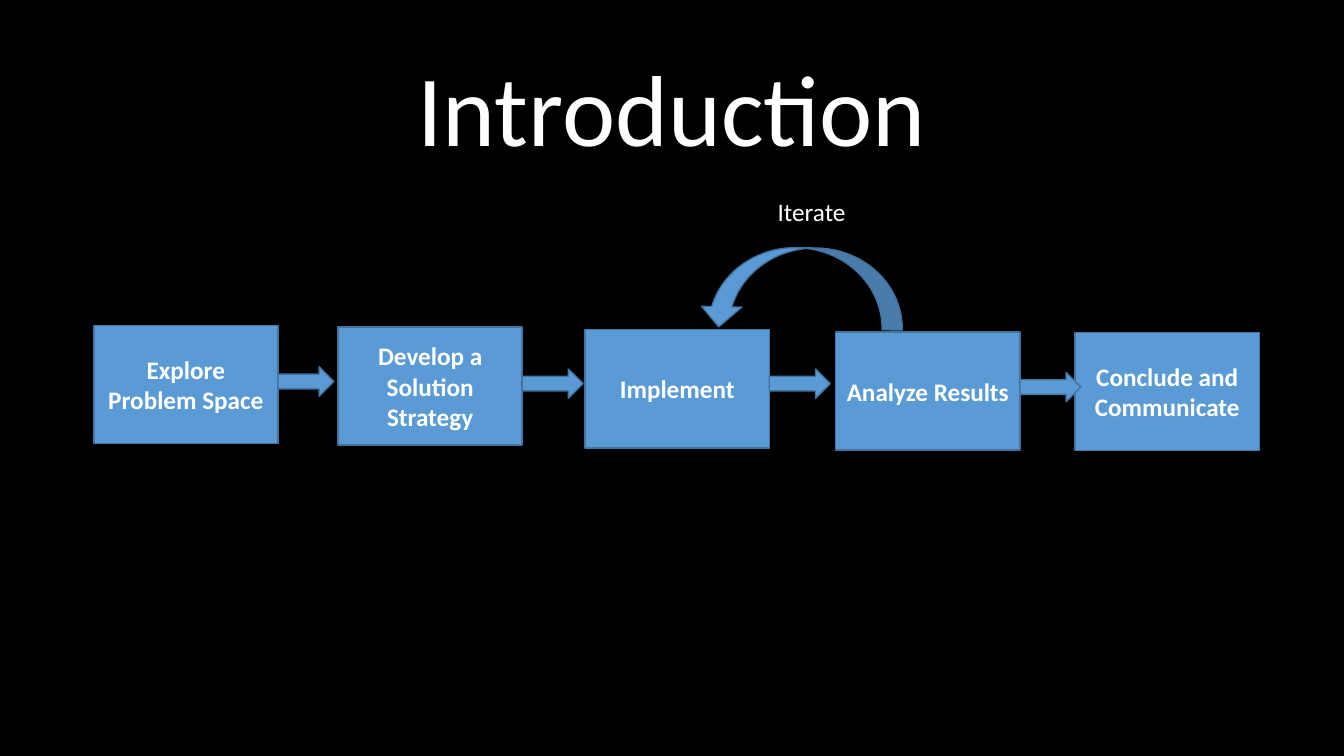
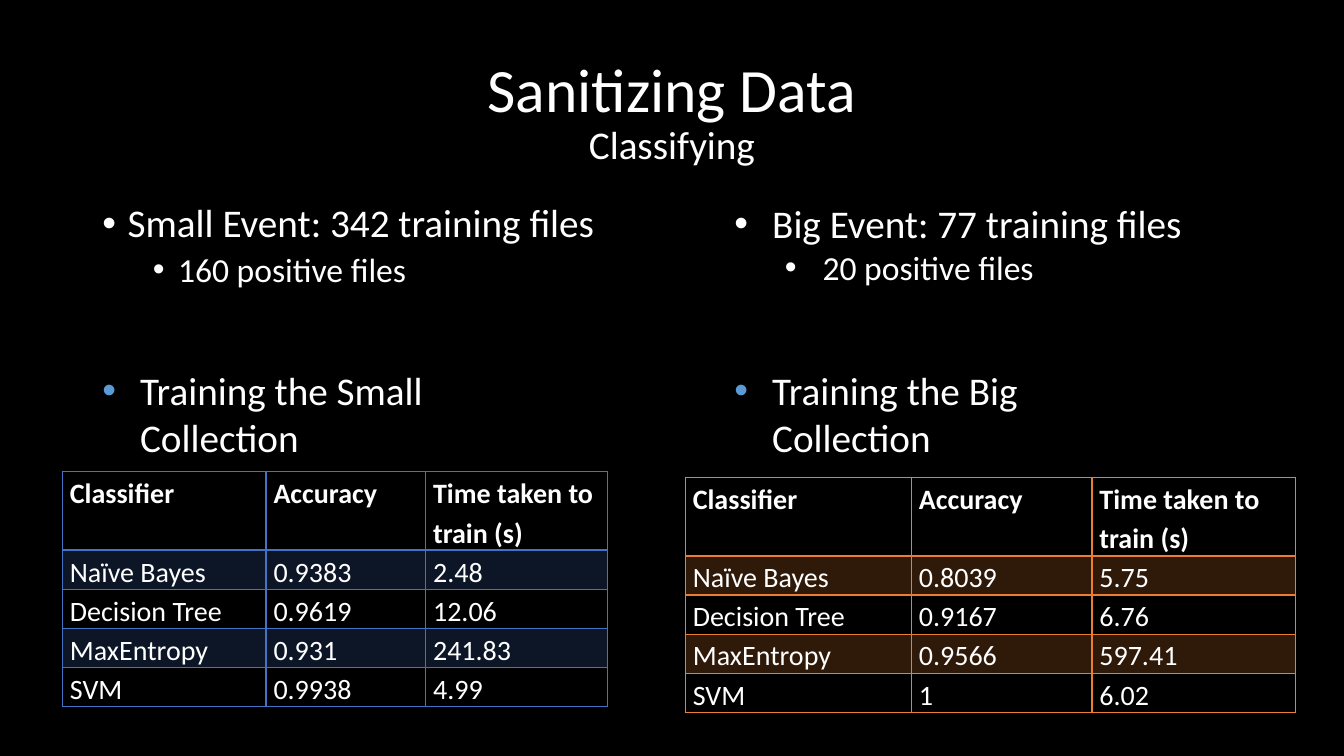
import pptx
import pptx.util
import pptx.dml.color
import pptx.enum.shapes
import pptx.enum.text
import pptx.oxml
import pptx.oxml.ns
import lxml.etree

Pt = pptx.util.Pt
RGBColor = pptx.dml.color.RGBColor
SHAPES = pptx.enum.shapes.MSO_SHAPE
ALIGN = pptx.enum.text.PP_ALIGN
ANCHOR = pptx.enum.text.MSO_ANCHOR
AUTO_SIZE = pptx.enum.text.MSO_AUTO_SIZE
qn = pptx.oxml.ns.qn

# Shared look
FONT = "Calibri"
BLACK = RGBColor(0x00, 0x00, 0x00)
WHITE = RGBColor(0xFF, 0xFF, 0xFF)
STEP_BLUE = RGBColor(0x5B, 0x9B, 0xD5)
STEP_EDGE = RGBColor(0x43, 0x73, 0x9E)
TABLE_BLUE = RGBColor(0x44, 0x72, 0xC4)
TABLE_ORANGE = RGBColor(0xED, 0x7D, 0x31)
TITLE_BOX = (66, 29, 828, 104)
TITLE_ONLY, TITLE_AND_BODY = 5, 1

# Slide 1 content: label, left, top of each step
STEPS = [
    ("Explore Problem Space", 67, 232.5),
    ("Develop a Solution Strategy", 241.5, 233.5),
    ("Implement", 418, 235.5),
    ("Analyze Results", 597, 237),
    ("Conclude and Communicate", 768, 237.5),
]
STEP_WIDTH, STEP_HEIGHT = 131.5, 84.5
ARROWS = [(262, 40), (263.5, 43.5), (263.5, 43.5), (266, 43.5)]  # top, width
ARROW_HEIGHT = 21
LOOP_BOX, LOOP_ROTATION = (543.5, 133, 57.5, 145.5), 91
LOOP_LABEL_BOX = (459.5, 137, 240.5, 29)

# Slide 2 content
# Bullets: lines, level, size, left margin, hanging indent, space before
SMALL_EVENT = [
    (["Small Event: 342 training files"], 0, 28, 18, 18, 0),
    (["160 positive files"], 1, 24, 54, 18, 5),
]
BIG_EVENT = [
    (["Big Event: 77 training files"], 0, 28, 27, 27, 0),
    (["20 positive files"], 1, 24, 63, 27, 0),
]
TRAINING = [
    (["Training the Small", "Collection"], (66, 258, 304.5, 100)),
    (["Training the Big", "Collection"], (517.5, 258, 376, 100)),
]
HEADER = ["Classifier", "Accuracy", "Time taken to train (s)"]
CLASSIFIERS = ["Naïve Bayes", "Decision Tree", "MaxEntropy", "SVM"]
# Colour, left, top, column widths, (accuracy, seconds) by classifier
RESULTS = [
    (TABLE_BLUE, 44.5, 337, (145.5, 114, 130),
     [("0.9383", "2.48"), ("0.9619", "12.06"), ("0.931", "241.83"), ("0.9938", "4.99")]),
    (TABLE_ORANGE, 489.5, 341, (161.5, 129, 145.5),
     [("0.8039", "5.75"), ("0.9167", "6.76"), ("0.9566", "597.41"), ("1", "6.02")]),
]
HEADER_HEIGHT, ROW_HEIGHT = 56, 28


def place(shape, box):
    shape.left, shape.top, shape.width, shape.height = map(Pt, box)


def add_run(paragraph, text, size, bold=False):
    run = paragraph.add_run()
    run.text = text
    run.font.name = FONT
    run.font.size = Pt(size)
    run.font.bold = bold
    run.font.color.rgb = WHITE


def add_slide(presentation, layout, title_lines):
    """Add a slide whose title has one (text, size) pair per line."""
    slide = presentation.slides.add_slide(presentation.slide_layouts[layout])
    title = slide.shapes.title
    place(title, TITLE_BOX)
    frame = title.text_frame
    frame.auto_size = AUTO_SIZE.NONE
    frame.vertical_anchor = ANCHOR.MIDDLE
    paragraph = frame.paragraphs[0]
    paragraph.alignment = ALIGN.CENTER
    paragraph.line_spacing = 0.9
    for index, (text, size) in enumerate(title_lines):
        if index:
            paragraph.add_line_break()
        add_run(paragraph, text, size)
    return slide


def add_textbox(slide, box):
    frame = slide.shapes.add_textbox(*map(Pt, box)).text_frame
    frame.word_wrap = True
    return frame


def add_block(slide, kind, box):
    shape = slide.shapes.add_shape(kind, *map(Pt, box))
    shape.shadow.inherit = False
    shape.fill.solid()
    shape.fill.fore_color.rgb = STEP_BLUE
    shape.line.color.rgb = STEP_EDGE
    shape.line.width = Pt(1)
    return shape


def write_bullets(frame, bullets, line_spacing=1.0, bullet_color=WHITE):
    for index, (lines, level, size, margin, hanging, before) in enumerate(bullets):
        paragraph = frame.add_paragraph() if index else frame.paragraphs[0]
        paragraph.level = level
        properties = paragraph._p.get_or_add_pPr()
        properties.set("marL", str(Pt(margin)))
        properties.set("indent", str(-Pt(hanging)))
        color = lxml.etree.SubElement(properties, qn("a:buClr"))
        lxml.etree.SubElement(color, qn("a:srgbClr"), val=str(bullet_color))
        lxml.etree.SubElement(properties, qn("a:buFont"), typeface="Arial")
        lxml.etree.SubElement(properties, qn("a:buChar"), char="•")
        paragraph.alignment = ALIGN.LEFT
        paragraph.line_spacing = line_spacing
        paragraph.space_before = Pt(before)
        for line_index, line in enumerate(lines):
            if line_index:
                paragraph.add_line_break()
            add_run(paragraph, line, size)


def style_cell(cell, color, row):
    """Draw borders, with a heavy rule under the header, and tint odd rows."""
    properties = cell._tc.get_or_add_tcPr()
    heavy_side = {0: "lnB", 1: "lnT"}.get(row)
    for side in ("lnL", "lnR", "lnT", "lnB"):
        width = Pt(2 if side == heavy_side else 1)
        line = lxml.etree.SubElement(properties, qn("a:" + side), w=str(width))
        fill = lxml.etree.SubElement(line, qn("a:solidFill"))
        lxml.etree.SubElement(fill, qn("a:srgbClr"), val=str(color))
    if row % 2:
        cell.fill.solid()
        cell.fill.fore_color.rgb = color
        tint = properties.find(qn("a:solidFill")).find(qn("a:srgbClr"))
        lxml.etree.SubElement(tint, qn("a:alpha"), val="20000")
    else:
        cell.fill.background()


def add_results(slide, color, left, top, widths, values):
    rows = [HEADER] + [[name, *pair] for name, pair in zip(CLASSIFIERS, values)]
    height = HEADER_HEIGHT + ROW_HEIGHT * len(values)
    table = slide.shapes.add_table(len(rows), len(HEADER), Pt(left), Pt(top),
                                   Pt(sum(widths)), Pt(height)).table
    table.first_row = table.horz_banding = False
    for column, width in zip(table.columns, widths):
        column.width = Pt(width)
    for row_index, texts in enumerate(rows):
        table.rows[row_index].height = Pt(ROW_HEIGHT if row_index else HEADER_HEIGHT)
        for column_index, text in enumerate(texts):
            cell = table.cell(row_index, column_index)
            cell.margin_left = cell.margin_right = Pt(5.4)
            cell.margin_top = cell.margin_bottom = Pt(0)
            paragraph = cell.text_frame.paragraphs[0]
            paragraph.line_spacing = 1.15
            add_run(paragraph, text, 20, bold=row_index == 0)
            style_cell(cell, color, row_index)


def build_introduction(presentation):
    slide = add_slide(presentation, TITLE_ONLY, [("Introduction", 72)])
    # Steps
    for label, left, top in STEPS:
        step = add_block(slide, SHAPES.RECTANGLE, (left, top, STEP_WIDTH, STEP_HEIGHT))
        frame = step.text_frame
        frame.word_wrap = True
        frame.vertical_anchor = ANCHOR.MIDDLE
        frame.paragraphs[0].alignment = ALIGN.CENTER
        add_run(frame.paragraphs[0], label, 18, bold=True)
    # Arrows from each step to the next
    for (_, left, _), (top, width) in zip(STEPS, ARROWS):
        add_block(slide, SHAPES.RIGHT_ARROW, (left + STEP_WIDTH, top, width, ARROW_HEIGHT))
    # Loop back
    loop = add_block(slide, SHAPES.CURVED_RIGHT_ARROW, LOOP_BOX)
    loop.rotation = LOOP_ROTATION
    paragraph = add_textbox(slide, LOOP_LABEL_BOX).paragraphs[0]
    paragraph.alignment = ALIGN.CENTER
    add_run(paragraph, "Iterate", 18)


def build_classifying(presentation):
    slide = add_slide(presentation, TITLE_AND_BODY,
                      [("Sanitizing Data", 44), ("Classifying", 28)])
    # Events
    body = slide.placeholders[1]
    place(body, (66, 142, 814.5, 116))
    body.text_frame.auto_size = AUTO_SIZE.NONE
    write_bullets(body.text_frame, SMALL_EVENT, line_spacing=0.9)
    write_bullets(add_textbox(slide, (517.5, 139, 417, 70.5)), BIG_EVENT)
    # Results
    for result in RESULTS:
        add_results(slide, *result)
    for lines, box in TRAINING:
        write_bullets(add_textbox(slide, box), [(lines, 0, 28, 27, 27, 0)],
                      bullet_color=STEP_BLUE)


def main():
    presentation = pptx.Presentation()
    presentation.slide_width, presentation.slide_height = Pt(960), Pt(540)
    background = presentation.slide_master.background.fill
    background.solid()
    background.fore_color.rgb = BLACK
    build_introduction(presentation)
    build_classifying(presentation)
    presentation.save("out.pptx")


if __name__ == "__main__":
    main()
